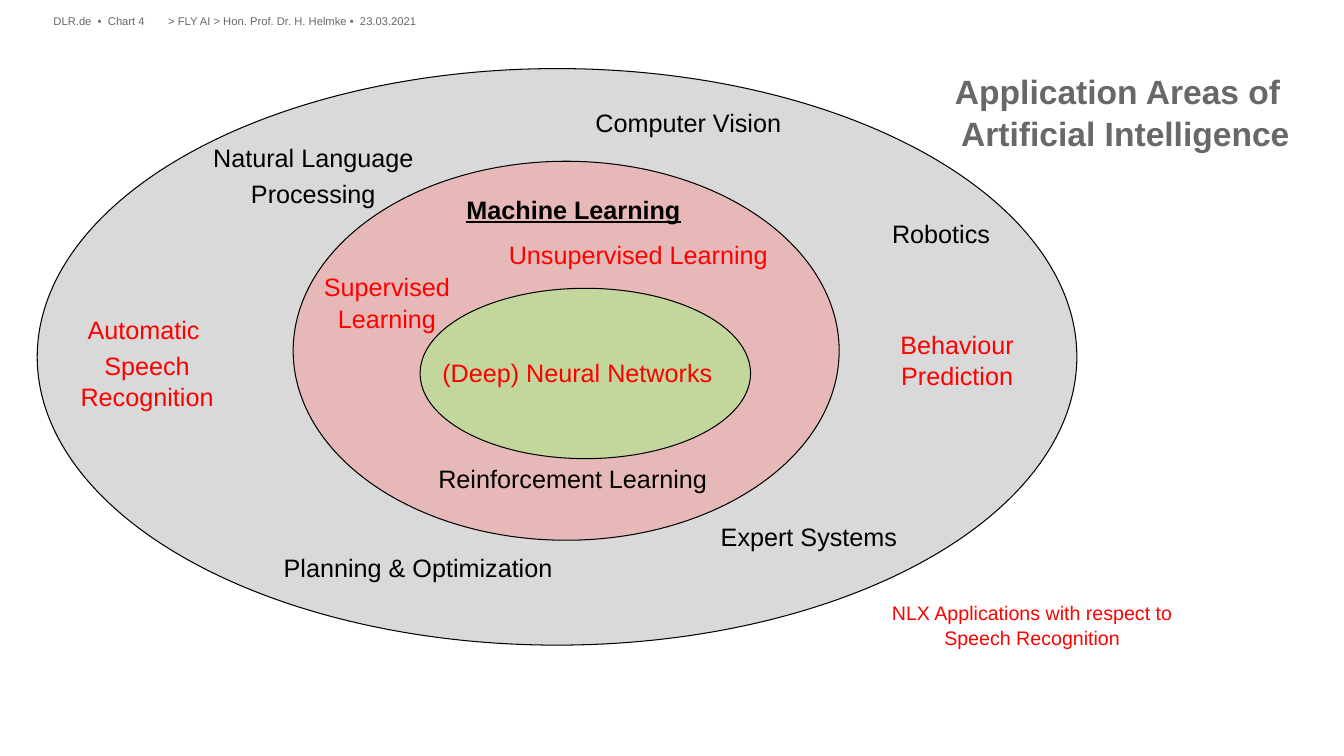
from pptx import Presentation
from pptx.dml.color import RGBColor
from pptx.enum.shapes import MSO_SHAPE
from pptx.enum.text import MSO_ANCHOR, PP_ALIGN
from pptx.util import Pt

OVAL = MSO_SHAPE.OVAL
TOP, BOTTOM = MSO_ANCHOR.TOP, MSO_ANCHOR.BOTTOM
LEFT, CENTER, RIGHT = PP_ALIGN.LEFT, PP_ALIGN.CENTER, PP_ALIGN.RIGHT

THEME = {
    "font": "Arial",
    "colors": {
        "muted": "686868", "plain": "000000", "highlight": "FF0000",
        "ai": "D9D9D9", "learning": "E6B9B8", "networks": "C3D69B",
    },
    "sizes": {"title": 24, "topic": 18, "note": 14, "header": 8},
    "outline": 0.75,
    "line_spacing": 1.05,
    "paragraph_gap": 3,
}

FIELDS = [
    ("ai", (26.6, 49, 743, 411.8)),
    ("learning", (209.5, 115.2, 390.2, 270.7)),
    ("networks", (300.2, 205.9, 236.2, 121.7)),
]

TITLE = ("Application Areas of \vArtificial Intelligence", (38.2, 51.1, 883.4, 58.3))

HEADERS = [
    ("DLR.de  •  Chart 4", (38.2, 10.1, 82, 11.5)),
    ("> FLY AI > Hon. Prof. Dr. H. Helmke •  23.03.2021", (120.2, 10.1, 801.4, 11.5)),
]

TOPICS = [
    ("Computer Vision", "plain", LEFT, (425.5, 75.5, 152.6, 25.9)),
    ("Natural Language\nProcessing", "plain", CENTER, (147.6, 100.8, 152.6, 47.5)),
    ("Automatic \nSpeech Recognition", "highlight", CENTER, (28.8, 223.2, 152.6, 74.9)),
    ("Robotics", "plain", CENTER, (596.2, 154.8, 152.6, 29.5)),
    ("Behaviour Prediction", "highlight", CENTER, (607.7, 233.9, 152.6, 46.1)),
    ("Planning & Optimization", "plain", CENTER, (184.3, 393.1, 229, 28.8)),
    ("Expert Systems", "plain", CENTER, (501.8, 371.5, 152.6, 28.8)),
    ("Supervised Learning", "highlight", CENTER, (200.2, 193, 152.6, 47.5)),
    ("Unsupervised Learning", "highlight", CENTER, (347.8, 169.9, 216.7, 30.2)),
    ("Reinforcement Learning", "plain", CENTER, (270, 329.8, 278.6, 47.5)),
    ("(Deep) Neural Networks", "highlight", LEFT, (316.1, 254.2, 203.8, 25.9)),
]

LEARNING_HEADING = ("Machine Learning", (333.4, 137.5, 168.5, 25.9))
NOTE = ("NLX Applications with respect to Speech Recognition", (630, 428.4, 215.3, 46.1))


def color(name):
    return RGBColor.from_string(THEME["colors"][name])


def points(box):
    return [Pt(length) for length in box]


def add_field(slide, name, box):
    field = slide.shapes.add_shape(OVAL, *points(box))
    field.shadow.inherit = False
    field.fill.solid()
    field.fill.fore_color.rgb = color(name)
    field.line.color.rgb = color("plain")
    field.line.width = Pt(THEME["outline"])


def add_label(slide, text, box, role, tone, align=LEFT, anchor=TOP,
              bold=False, underline=False, spacing=THEME["line_spacing"]):
    frame = slide.shapes.add_textbox(*points(box)).text_frame
    frame.word_wrap = True
    frame.vertical_anchor = anchor
    frame.margin_left = frame.margin_top = frame.margin_right = frame.margin_bottom = 0
    frame.text = text
    for index, paragraph in enumerate(frame.paragraphs):
        paragraph.alignment = align
        paragraph.line_spacing = spacing
        if index:
            paragraph.space_before = Pt(THEME["paragraph_gap"])
        for run in paragraph.runs:
            run.font.name = THEME["font"]
            run.font.size = Pt(THEME["sizes"][role])
            run.font.color.rgb = color(tone)
            run.font.bold = bold
            run.font.underline = underline


def main():
    deck = Presentation()
    deck.slide_width, deck.slide_height = Pt(960.5), Pt(540)
    slide = deck.slides.add_slide(deck.slide_layouts[6])

    for name, box in FIELDS:
        add_field(slide, name, box)
    add_label(slide, *TITLE, "title", "muted", RIGHT, BOTTOM, bold=True)
    for text, box in HEADERS:
        add_label(slide, text, box, "header", "muted", spacing=1.0)
    for text, tone, align, box in TOPICS:
        add_label(slide, text, box, "topic", tone, align)
    add_label(slide, *LEARNING_HEADING, "topic", "plain", bold=True, underline=True)
    add_label(slide, *NOTE, "note", "highlight", CENTER)

    deck.save("out.pptx")


if __name__ == "__main__":
    main()
